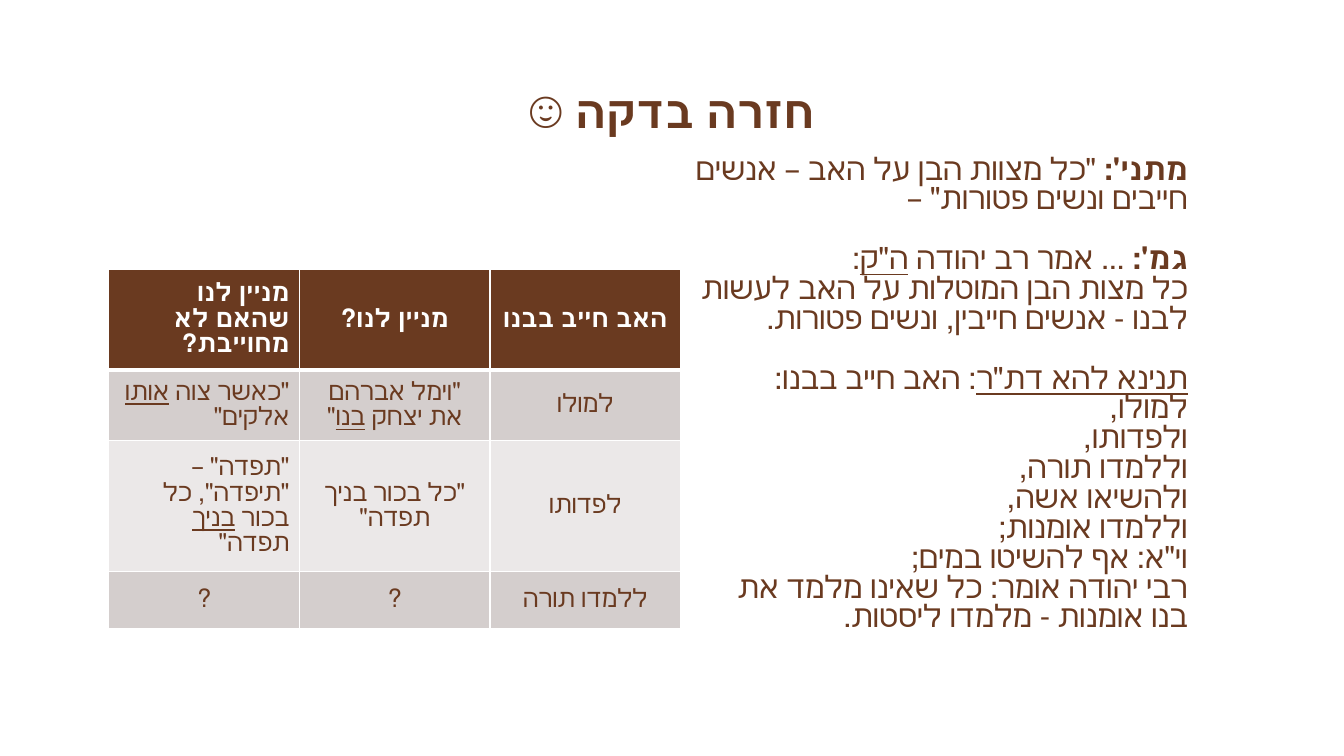
from lxml import etree
from pptx import Presentation
from pptx.dml.color import RGBColor
from pptx.enum.text import MSO_ANCHOR as Anchor, PP_ALIGN as Align
from pptx.oxml.ns import qn
from pptx.util import Inches, Pt

THEME = {
    "font": "Cambria",
    "brown": "6A3A20", "white": "FFFFFF",
    "bands": ("D4CECD", "EBE8E8"),
    "title_size": 32, "body_size": 22.2, "table_size": 18,
    "rule": 1, "header_rule": 3,
}
PLAIN, BOLD, UNDERLINE = "plain", "bold", "underline"

TITLE = "חזרה בדקה ☺"
PASSAGES = [
    [[("מתני': ", BOLD), ("\"כל מצוות הבן על האב – אנשים חייבים ונשים פטורות\" –", PLAIN)]],
    [
        [("גמ': ", BOLD), ("... אמר רב יהודה ", PLAIN), ("ה\"ק", UNDERLINE), (":", PLAIN)],
        [("כל מצות הבן המוטלות על האב לעשות לבנו - אנשים חייבין, ונשים פטורות.", PLAIN)],
    ],
    [
        [("תנינא להא דת\"ר", UNDERLINE), (": האב חייב בבנו:", PLAIN)],
        [("למולו,", PLAIN)],
        [("ולפדותו,", PLAIN)],
        [("וללמדו תורה,", PLAIN)],
        [("ולהשיאו אשה,", PLAIN)],
        [("וללמדו אומנות;", PLAIN)],
        [("וי\"א: אף להשיטו במים;", PLAIN)],
        [("רבי יהודה אומר: כל שאינו מלמד את בנו אומנות - מלמדו ליסטות.", PLAIN)],
    ],
]
INDENTED = "למולו,"
DUTIES = [
    [[("מניין לנו שהאם לא מחוייבת?", PLAIN)], [("מניין לנו?", PLAIN)], [("האב חייב בבנו", PLAIN)]],
    [
        [("\"כאשר צוה ", PLAIN), ("אותו", UNDERLINE), (" אלקים\"", PLAIN)],
        [("\"וימל אברהם את יצחק ", PLAIN), ("בנו", UNDERLINE), ("\"", PLAIN)],
        [("למולו", PLAIN)],
    ],
    [
        [("\"תפדה\" – \"תיפדה\", כל בכור ", PLAIN), ("בניך", UNDERLINE), (" תפדה\"", PLAIN)],
        [("\"כל בכור בניך תפדה\"", PLAIN)],
        [("לפדותו", PLAIN)],
    ],
    [[("?", PLAIN)], [("?", PLAIN)], [("ללמדו תורה", PLAIN)]],
]

TITLE_BOX = (1.33, 0.47, 10.66, 0.94)
PASSAGE_BOX = (6.66, 1.5, 5.22, 5.17)
TABLE_LEFT, TABLE_TOP = 1.08, 2.67
COLUMN_WIDTH, ROW_HEIGHT = 1.89, 0.57
PASSAGE_GAP = 21.4
INDENT = 0.15


def write(paragraph, runs, size, color, align, bold=False):
    paragraph.alignment = align
    paragraph._p.get_or_add_pPr().set("rtl", "1")
    font = paragraph.font
    font.name, font.size, font.bold = THEME["font"], Pt(size), bold
    font.color.rgb = RGBColor.from_string(color)
    for words, style in runs:
        run = paragraph.add_run()
        run.text = words
        if style == BOLD:
            run.font.bold = True
        elif style == UNDERLINE:
            run.font.underline = True


def add_text_frame(slide, box, anchor):
    frame = slide.shapes.add_textbox(*map(Inches, box)).text_frame
    frame.word_wrap = True
    frame.vertical_anchor = anchor
    return frame


def add_borders(cell, bottom):
    properties = cell._tc.get_or_add_tcPr()
    widths = {"a:lnL": THEME["rule"], "a:lnR": THEME["rule"], "a:lnT": THEME["rule"], "a:lnB": bottom}
    for position, (side, width) in enumerate(widths.items()):
        line = etree.Element(qn(side), w=str(Pt(width)))
        fill = etree.SubElement(line, qn("a:solidFill"))
        etree.SubElement(fill, qn("a:srgbClr"), val=THEME["white"])
        properties.insert(position, line)


def add_passages(slide):
    frame = add_text_frame(slide, PASSAGE_BOX, Anchor.TOP)
    for section, lines in enumerate(PASSAGES):
        for number, runs in enumerate(lines):
            first = section == number == 0
            paragraph = frame.paragraphs[0] if first else frame.add_paragraph()
            paragraph.line_spacing = 0.8
            if section and number == 0:
                paragraph.space_before = Pt(PASSAGE_GAP)
            if runs[0][0] == INDENTED:
                paragraph._p.get_or_add_pPr().set("marR", str(Inches(INDENT)))
            write(paragraph, runs, THEME["body_size"], THEME["brown"], Align.RIGHT)


def add_duties(slide):
    rows, columns = len(DUTIES), len(DUTIES[0])
    table = slide.shapes.add_table(
        rows, columns, Inches(TABLE_LEFT), Inches(TABLE_TOP),
        Inches(COLUMN_WIDTH * columns), Inches(ROW_HEIGHT * rows)).table
    for row, duty in enumerate(DUTIES):
        header = row == 0
        background = THEME["brown"] if header else THEME["bands"][(row - 1) % 2]
        color = THEME["white"] if header else THEME["brown"]
        for column, runs in enumerate(duty):
            cell = table.cell(row, column)
            cell.vertical_anchor = Anchor.MIDDLE
            cell.fill.solid()
            cell.fill.fore_color.rgb = RGBColor.from_string(background)
            add_borders(cell, THEME["header_rule"] if header else THEME["rule"])
            align = Align.RIGHT if column == 0 and row < rows - 1 else Align.CENTER
            write(cell.text_frame.paragraphs[0], runs, THEME["table_size"], color, align, header)


def main():
    deck = Presentation()
    deck.slide_width, deck.slide_height = Inches(13.33), Inches(7.5)
    slide = deck.slides.add_slide(deck.slide_layouts[6])
    heading = add_text_frame(slide, TITLE_BOX, Anchor.BOTTOM)
    write(heading.paragraphs[0], [(TITLE, PLAIN)], THEME["title_size"], THEME["brown"], Align.CENTER, True)
    add_duties(slide)
    add_passages(slide)
    deck.save("out.pptx")


if __name__ == "__main__":
    main()
